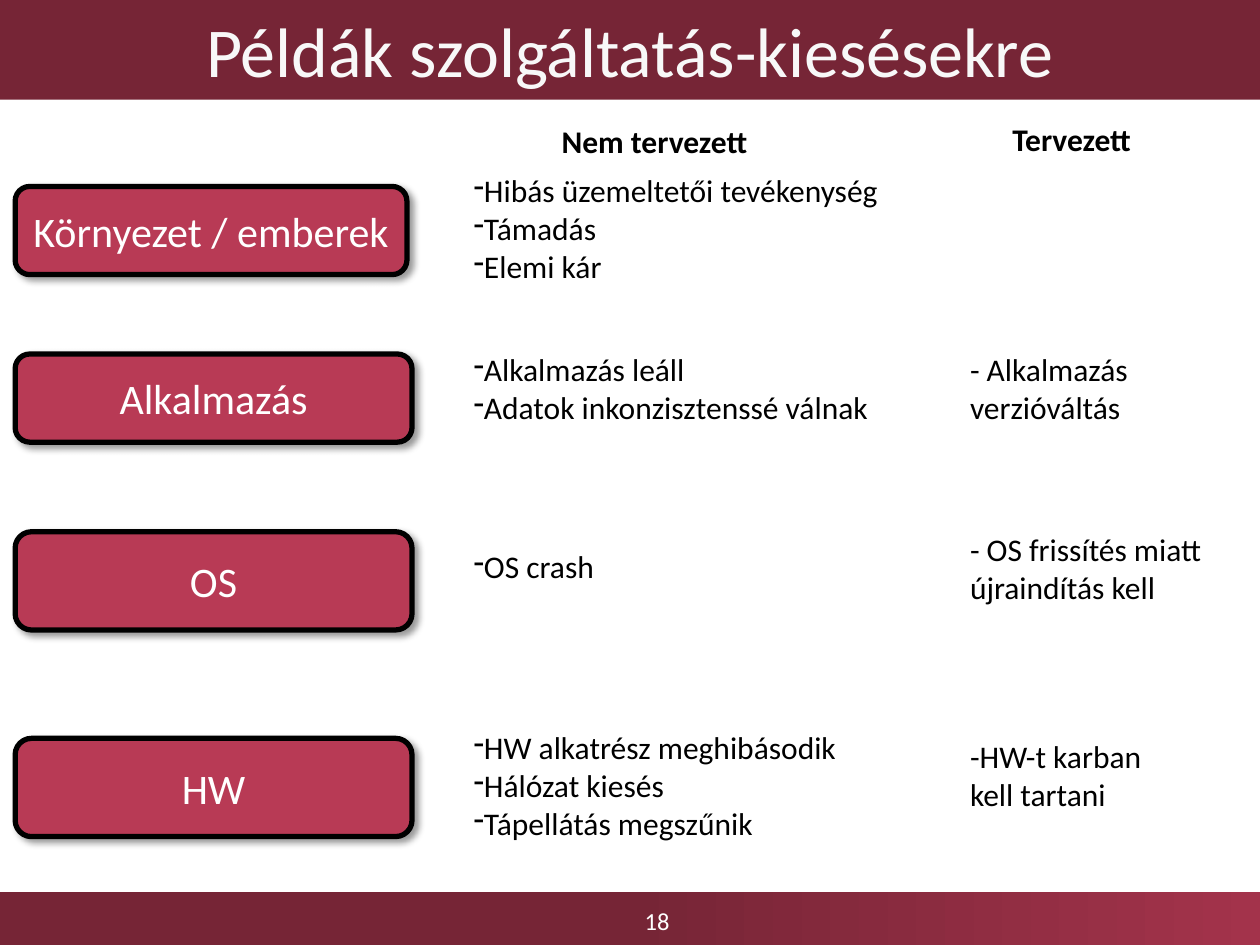
from lxml import etree
from pptx import Presentation
from pptx.dml.color import RGBColor
from pptx.enum.shapes import MSO_SHAPE
from pptx.enum.text import MSO_ANCHOR, MSO_AUTO_SIZE, PP_ALIGN
from pptx.oxml.ns import qn
from pptx.util import Inches, Pt

RECTANGLE = MSO_SHAPE.RECTANGLE
ROUNDED = MSO_SHAPE.ROUNDED_RECTANGLE
MIDDLE = MSO_ANCHOR.MIDDLE
TOP = MSO_ANCHOR.TOP
FIT_SHAPE = MSO_AUTO_SIZE.SHAPE_TO_FIT_TEXT
CENTER = PP_ALIGN.CENTER
LEFT = PP_ALIGN.LEFT

FONT = "Calibri"
DARK, ACCENT, BRIGHT = "762536", "B83A55", "A3334B"
BLACK, WHITE, OFF_WHITE = "000000", "FFFFFF", "F8F8F8"
LABEL_LEFT, UNPLANNED_LEFT, PLANNED_LEFT = 0.12, 3.66, 7.6

LAYERS = [
    ("Környezet / emberek", 1.48, 3.11, 0.7),
    ("Alkalmazás", 2.81, 3.15, 0.7),
    ("OS", 4.22, 3.15, 0.78),
    ("HW", 5.86, 3.15, 0.78),
]
UNPLANNED = [
    ("Hibás üzemeltetői tevékenység\nTámadás\nElemi kár", 1.31, 3.75, 1.01),
    ("Alkalmazás leáll\nAdatok inkonzisztenssé válnak", 2.73, 3.75, 0.71),
    ("OS crash", 4.29, 3.75, 0.4),
    ("HW alkatrész meghibásodik\nHálózat kiesés\nTápellátás megszűnik", 5.73, 3.62, 1.01),
]
PLANNED = [
    ("- Alkalmazás \vverzióváltás", 2.73, 1.52, 1.01, False),
    ("- OS frissítés miatt \vújraindítás kell", 4.16, 2.12, 1.01, False),
    ("-HW-t karban kell tartani", 5.8, 1.65, 0.71, True),
]
HEADINGS = [("Nem tervezett", 4.13, 0.92), ("Tervezett", 7.44, 0.9)]


def rgb(color):
    """Turn a hex string into a colour."""
    return RGBColor.from_string(color)


def write_text(shape, text, size, color, align=LEFT, anchor=TOP, bold=False):
    """Write text into a shape and format all its runs."""
    frame = shape.text_frame
    frame.text = text
    frame.vertical_anchor = anchor
    for paragraph in frame.paragraphs:
        paragraph.alignment = align
        for run in paragraph.runs:
            run.font.name = FONT
            run.font.size = Pt(size)
            run.font.bold = bold
            run.font.color.rgb = rgb(color)


def add_box(slide, kind, left, top, width, height, fill):
    """Add a filled preset shape without line or shadow."""
    shape = slide.shapes.add_shape(kind, Inches(left), Inches(top), Inches(width), Inches(height))
    shape.shadow.inherit = False
    shape.fill.solid()
    shape.fill.fore_color.rgb = rgb(fill)
    shape.line.fill.background()
    shape.text_frame.word_wrap = True
    return shape


def add_shadow(shape):
    """Give a shape a soft black shadow to the lower right."""
    effects = shape._element.spPr.find(qn("a:effectLst"))
    shadow = etree.SubElement(
        effects, qn("a:outerShdw"), blurRad=str(Pt(4)), dist=str(Pt(3)),
        dir=str(45 * 60000), algn="tl", rotWithShape="0")
    color = etree.SubElement(shadow, qn("a:srgbClr"), val=BLACK)
    etree.SubElement(color, qn("a:alpha"), val="40000")


def add_layer(slide, text, top, width, height):
    """Add the rounded label of one system layer."""
    shape = add_box(slide, ROUNDED, LABEL_LEFT, top, width, height, ACCENT)
    shape.line.color.rgb = rgb(BLACK)
    shape.line.width = Pt(3)
    add_shadow(shape)
    shape.text_frame.margin_left = shape.text_frame.margin_right = Inches(0.05)
    write_text(shape, text, 24, WHITE, CENTER, MIDDLE)


def add_text(slide, text, left, top, width, height, wrap=True, size=18, color=BLACK, **style):
    """Add a text box and return it."""
    box = slide.shapes.add_textbox(Inches(left), Inches(top), Inches(width), Inches(height))
    box.text_frame.word_wrap = wrap
    box.text_frame.auto_size = FIT_SHAPE
    write_text(box, text, size, color, **style)
    return box


def add_dash_list(slide, text, top, width, height):
    """Add a list of unplanned outages with dash bullets."""
    box = add_text(slide, text, UNPLANNED_LEFT, top, width, height)
    for paragraph in box.text_frame.paragraphs:
        properties = paragraph._p.get_or_add_pPr()
        properties.set("marL", "0")
        properties.set("indent", "0")
        etree.SubElement(properties, qn("a:buChar"), char="-")


def add_footer(slide):
    """Add the gradient footer band with the slide number."""
    band = add_box(slide, RECTANGLE, 0, 7.08, 10, 0.42, DARK)
    band.fill.gradient()
    band.fill.gradient_angle = 0
    for stop, position, color in zip(band.fill.gradient_stops, (0.5, 1), (DARK, BRIGHT)):
        stop.position = position
        stop.color.rgb = rgb(color)
    number = add_text(slide, "18", 3.59, 7.11, 3.25, 0.39, size=14, color=WHITE,
                      align=CENTER, anchor=MIDDLE)
    number.text_frame.auto_size = MSO_AUTO_SIZE.NONE


def main():
    """Build the slide and save it."""
    presentation = Presentation()
    presentation.slide_width, presentation.slide_height = Inches(10), Inches(7.5)
    slide = presentation.slides.add_slide(presentation.slide_layouts[6])
    add_footer(slide)
    title = add_box(slide, RECTANGLE, 0, 0, 10, 0.79, DARK)
    write_text(title, "Példák szolgáltatás-kiesésekre", 40, OFF_WHITE, CENTER, MIDDLE)
    for layer in LAYERS:
        add_layer(slide, *layer)
    for heading, left, top in HEADINGS:
        add_text(slide, heading, left, top, 2.13, 0.4, align=CENTER, bold=True)
    for outages in UNPLANNED:
        add_dash_list(slide, *outages)
    for text, top, width, height, wrap in PLANNED:
        add_text(slide, text, PLANNED_LEFT, top, width, height, wrap)
    presentation.save("out.pptx")


if __name__ == "__main__":
    main()
